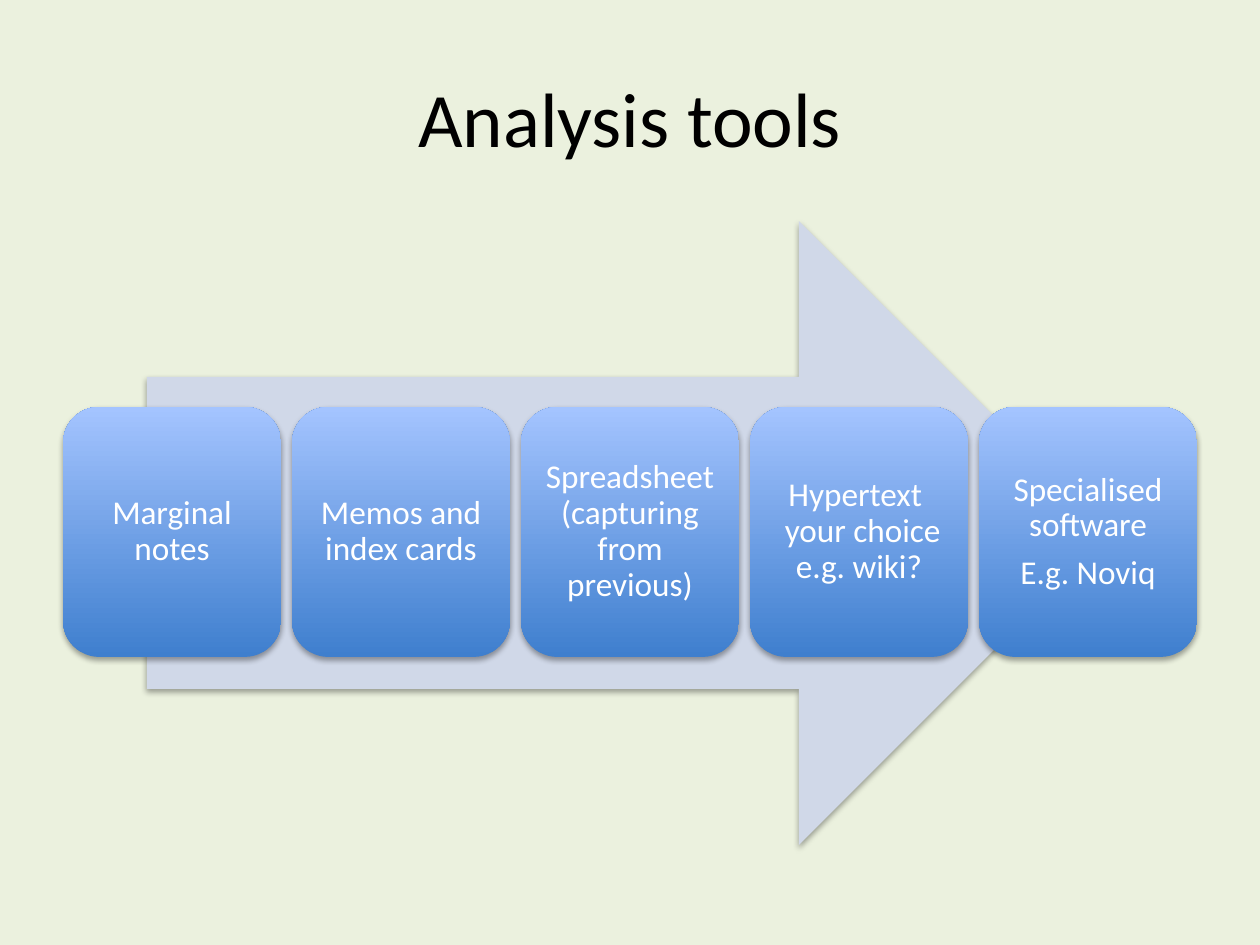
from lxml.etree import SubElement
from pptx import Presentation
from pptx.dml.color import RGBColor
from pptx.enum.shapes import MSO_SHAPE as Shape
from pptx.enum.text import MSO_ANCHOR as Anchor, PP_ALIGN as Align
from pptx.oxml.ns import qn
from pptx.util import Emu, Pt

PX = 914400 // 126


def color(value):
    return RGBColor.from_string(value)


def add_block(kind, left, top, width, height):
    """Add a borderless shape with a soft shadow falling straight down."""
    block = page.shapes.add_shape(
        kind, left * PX, top * PX, width * PX, height * PX)
    block.line.fill.background()
    block.shadow.inherit = False
    effects = block._element.spPr.find(qn("a:effectLst"))
    shadow = SubElement(effects, qn("a:outerShdw"), blurRad=str(Pt(3.1)),
                        dist=str(Pt(1.8)), dir="5400000", rotWithShape="0")
    black = SubElement(shadow, qn("a:srgbClr"), val="000000")
    SubElement(black, qn("a:alpha"), val="35000")
    return block


deck = Presentation()
deck.slide_width, deck.slide_height = Emu(1260 * PX), Emu(945 * PX)
page = deck.slides.add_slide(deck.slide_layouts[6])
page.background.fill.solid()
page.background.fill.fore_color.rgb = color("EBF1DE")

title = page.shapes.add_textbox(63 * PX, 38 * PX, 1134 * PX, 157 * PX)
title.text_frame.word_wrap = True
title.text_frame.vertical_anchor = Anchor.MIDDLE
para = title.text_frame.paragraphs[0]
para.text = "Analysis tools"
para.alignment = Align.CENTER
para.font.name, para.font.size = "Calibri", Pt(44)
para.font.color.rgb = color("000000")

arrow = add_block(Shape.RIGHT_ARROW, 147, 221, 964, 624)
arrow.fill.solid()
arrow.fill.fore_color.rgb = color("D0D8E8")

# "\v" is a line break, "\n" a new paragraph
tools = [
    "Marginal notes",
    "Memos and index cards",
    "Spreadsheet (capturing from previous)",
    "Hypertext \v your choice\ve.g. wiki?",
    "Specialised software\nE.g. Noviq",
]
for index, tool in enumerate(tools):
    card = add_block(Shape.ROUNDED_RECTANGLE, 63 + 229 * index, 407, 218, 250)
    card.fill.gradient()
    card.fill.gradient_angle = 90
    for stop, shade in zip(card.fill.gradient_stops, ("3F7FCE", "A4C4FF")):
        stop.color.rgb = color(shade)

    frame = card.text_frame
    frame.word_wrap = True
    frame.vertical_anchor = Anchor.MIDDLE
    frame.margin_left = frame.margin_right = 10 * PX
    frame.margin_top = frame.margin_bottom = 10 * PX
    frame.text = tool
    for para in frame.paragraphs:
        para.alignment = Align.CENTER
        para.line_spacing = 0.9
        para.space_after = Pt(6.5)
        para.font.name, para.font.size = "Calibri", Pt(19)
        para.font.color.rgb = color("FFFFFF")

deck.save("out.pptx")
